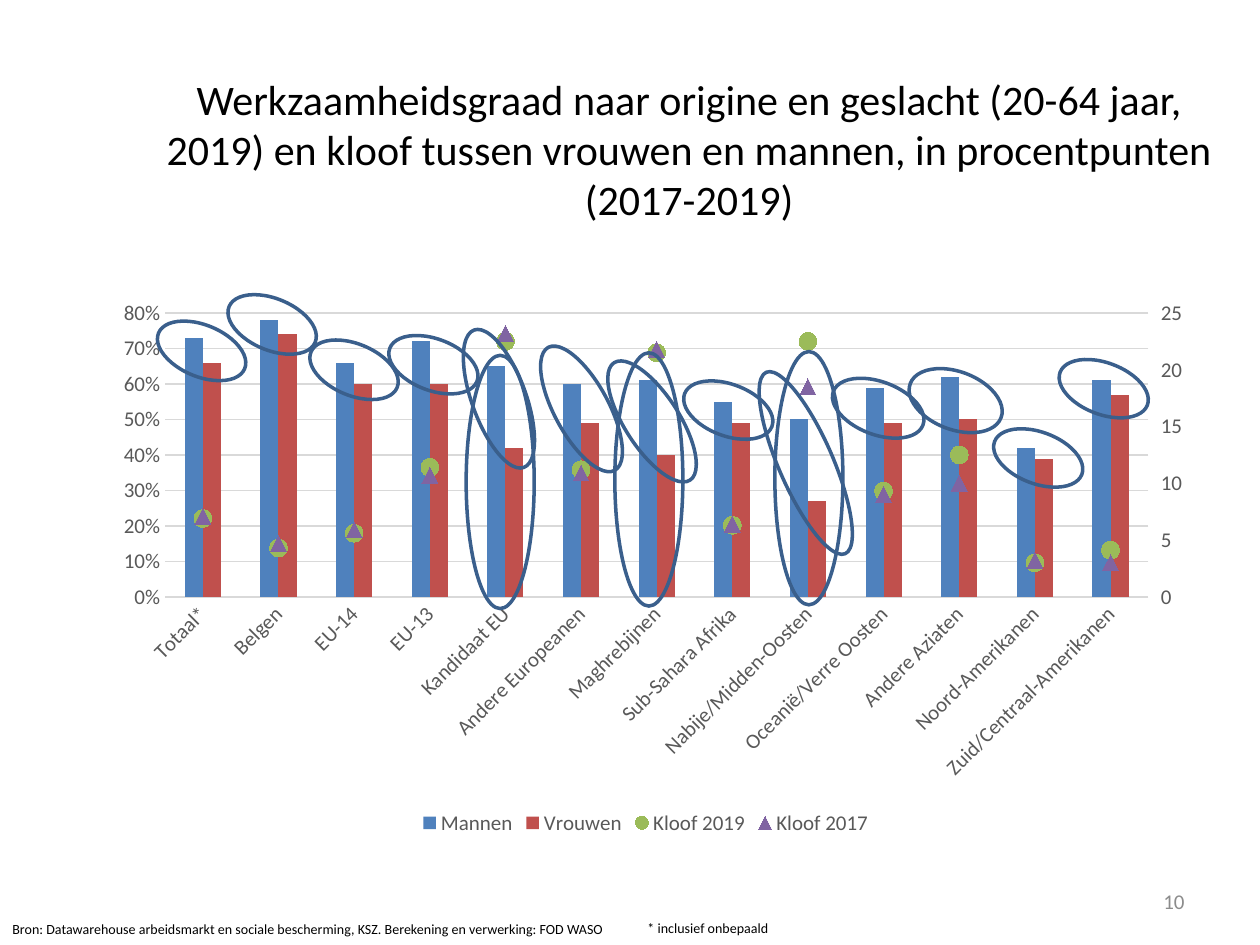
"""Build the slide on employment rate by origin and gender."""
from lxml import etree
from pptx import Presentation
from pptx.chart.data import CategoryChartData
from pptx.dml.color import RGBColor
from pptx.enum import chart as ch, shapes, text
from pptx.oxml import parse_xml
from pptx.oxml.ns import qn
from pptx.util import Inches, Pt

THEME = {
    "font": "Calibri", "ink": "000000", "axis": "595959", "grid": "D9D9D9",
    "number": "8C8C8C", "ring": "3A5F8C",
    "title_size": 24, "chart_size": 12, "note_size": 8,
}
TITLE = ("Werkzaamheidsgraad naar origine en geslacht (20-64 jaar, 2019) en kloof "
         "tussen vrouwen en mannen, in procentpunten (2017-2019)")
SOURCE = ("Bron: Datawarehouse arbeidsmarkt en sociale bescherming, KSZ. "
          "Berekening en verwerking: FOD WASO")
FOOTNOTE = "* inclusief onbepaald"
PAGE = "10"

ORIGINS = ["Totaal*", "Belgen", "EU-14", "EU-13", "Kandidaat EU", "Andere Europeanen",
           "Maghrebijnen", "Sub-Sahara Afrika", "Nabije/Midden-Oosten",
           "Oceanië/Verre Oosten", "Andere Aziaten", "Noord-Amerikanen",
           "Zuid/Centraal-Amerikanen"]
RATES = [
    ("Mannen", "4F81BD",
     [.73, .78, .66, .72, .65, .6, .61, .55, .5, .59, .62, .42, .61]),
    ("Vrouwen", "C0504D",
     [.66, .74, .6, .6, .42, .49, .4, .49, .27, .49, .5, .39, .57]),
]
GAPS = [
    ("Kloof 2019", "9BBB59", ch.XL_MARKER_STYLE.CIRCLE, 10,
     [6.9, 4.3, 5.6, 11.4, 22.5, 11.2, 21.5, 6.3, 22.5, 9.3, 12.5, 3, 4.1]),
    ("Kloof 2017", "8064A2", ch.XL_MARKER_STYLE.TRIANGLE, 9,
     [7.1, 4.7, 5.9, 10.7, 23.2, 10.9, 21.8, 6.4, 18.5, 9, 10, 3.2, 3]),
]
PLOT_AREA = {"x": .064, "y": .051, "w": .892, "h": .511}

SMALL, TALL = (.74, .41), (.54, 2.01)
RINGS = [
    (1.23, 2.58, SMALL, 22.5), (1.79, 2.37, SMALL, 22.5), (2.44, 2.73, SMALL, 22.5),
    (3.07, 2.69, SMALL, 20.6), (8.39, 2.88, SMALL, 20.6), (7.87, 3.43, SMALL, 20.6),
    (6.59, 3.03, (.76, .42), 20.6), (4.62, 3.13, (1.11, .43), 57.1),
    (4.06, 3.03, (1.11, .43), 61.6), (3.38, 2.95, (1.16, .43), 70.1),
    (5.41, 3.05, SMALL, 20.6), (5.61, 3.46, (1.57, .43), 66.5),
    (3.7, 2.82, TALL, 0), (4.88, 2.8, TALL, 0), (6.15, 2.79, TALL, 0),
    (7.2, 2.95, (.77, .46), 20.6),
]

XML_NAMES = ('xmlns:c="http://schemas.openxmlformats.org/drawingml/2006/chart" '
             'xmlns:a="http://schemas.openxmlformats.org/drawingml/2006/main"')
LINE_PLOT = f"""<c:lineChart {XML_NAMES}><c:grouping val="standard"/><c:varyColors val="0"/>
<c:marker val="1"/><c:axId val="5001"/><c:axId val="5002"/></c:lineChart>"""
RIGHT_AXES = [
    f"""<c:valAx {XML_NAMES}><c:axId val="5002"/>
<c:scaling><c:orientation val="minMax"/><c:max val="25"/><c:min val="0"/></c:scaling>
<c:delete val="0"/><c:axPos val="r"/><c:numFmt formatCode="0" sourceLinked="0"/>
<c:majorTickMark val="out"/><c:minorTickMark val="none"/><c:tickLblPos val="nextTo"/>
<c:spPr><a:ln><a:noFill/></a:ln></c:spPr>
<c:txPr><a:bodyPr/><a:p><a:pPr><a:defRPr sz="{THEME['chart_size'] * 100}">
<a:solidFill><a:srgbClr val="{THEME['axis']}"/></a:solidFill>
<a:latin typeface="{THEME['font']}"/></a:defRPr></a:pPr></a:p></c:txPr>
<c:crossAx val="5001"/><c:crosses val="max"/><c:crossBetween val="between"/>
<c:majorUnit val="5"/></c:valAx>""",
    f"""<c:catAx {XML_NAMES}><c:axId val="5001"/>
<c:scaling><c:orientation val="minMax"/></c:scaling><c:delete val="1"/><c:axPos val="b"/>
<c:majorTickMark val="none"/><c:minorTickMark val="none"/><c:tickLblPos val="nextTo"/>
<c:crossAx val="5002"/><c:crosses val="autoZero"/></c:catAx>""",
]


def color(name):
    return RGBColor.from_string(THEME.get(name, name))


def style_font(font, size, ink):
    font.name, font.size = THEME["font"], Pt(THEME[size])
    font.color.rgb = color(ink)


def write(frame, words, size, ink, align):
    paragraph = frame.paragraphs[0]
    paragraph.alignment = align
    run = paragraph.add_run()
    run.text = words
    style_font(run.font, size, ink)


def place(shape, box):
    shape.left, shape.top, shape.width, shape.height = map(Inches, box)


def add_note(slide, box, words, size="note_size", ink="ink", align=text.PP_ALIGN.LEFT,
             wrap=True, anchor=text.MSO_ANCHOR.TOP):
    frame = slide.shapes.add_textbox(*map(Inches, box)).text_frame
    frame.word_wrap, frame.vertical_anchor = wrap, anchor
    write(frame, words, size, ink, align)


def add_rates_chart(slide):
    data = CategoryChartData(number_format="0%")
    data.categories = ORIGINS
    for name, _, values in RATES:
        data.add_series(name, values)
    for name, *_, values in GAPS:
        data.add_series(name, values, number_format="0.0")
    chart = slide.shapes.add_chart(
        ch.XL_CHART_TYPE.COLUMN_CLUSTERED,
        *map(Inches, (.75, 2.26, 8.75, 4.41)), data).chart
    style_font(chart.font, "chart_size", "ink")
    chart.has_title = False
    chart.has_legend = True
    chart.legend.position = ch.XL_LEGEND_POSITION.BOTTOM
    chart.legend.include_in_layout = False
    style_font(chart.legend.font, "chart_size", "axis")

    origins, rates = chart.category_axis, chart.value_axis
    for axis in (origins, rates):
        axis.major_tick_mark = axis.minor_tick_mark = ch.XL_TICK_MARK.NONE
        style_font(axis.tick_labels.font, "chart_size", "axis")
    label_body = origins._element.find(qn("c:txPr")).find(qn("a:bodyPr"))
    label_body.set("rot", "-2700000")
    label_body.set("vert", "horz")
    rates.minimum_scale, rates.maximum_scale, rates.major_unit = 0, .8, .1
    rates.tick_labels.number_format = "0%"
    rates.tick_labels.number_format_is_linked = False
    rates.format.line.fill.background()
    for line in (origins.format.line, rates.major_gridlines.format.line):
        line.color.rgb, line.width = color("grid"), Pt(.75)

    split_gaps(chart)
    bars, markers = chart.plots
    bars.gap_width, bars.overlap, bars.vary_by_categories = 219, 0, False
    for series, (_, ink, _) in zip(bars.series, RATES):
        series.format.fill.solid()
        series.format.fill.fore_color.rgb = color(ink)
    for series, (_, ink, style, size, _) in zip(markers.series, GAPS):
        series.smooth = False
        series.format.line.fill.background()
        series.marker.style, series.marker.size = style, size
        series.marker.format.fill.solid()
        series.marker.format.fill.fore_color.rgb = color(ink)
        series.marker.format.line.color.rgb = color(ink)


def split_gaps(chart):
    bars = chart.plots[0]._element
    area = bars.getparent()
    lines = parse_xml(LINE_PLOT)
    line_marker = lines.find(qn("c:marker"))
    for series in bars.findall(qn("c:ser"))[len(RATES):]:
        for bar_only in series.findall(qn("c:invertIfNegative")):
            series.remove(bar_only)
        line_marker.addprevious(series)
    bars.addnext(lines)
    for axis in RIGHT_AXES:
        area.findall(qn("c:valAx"))[-1].addnext(parse_xml(axis))
    for layout in area.findall(qn("c:layout")):
        area.remove(layout)
    layout = etree.SubElement(area, qn("c:layout"))
    area.insert(0, layout)
    manual = etree.SubElement(layout, qn("c:manualLayout"))
    settings = {"layoutTarget": "inner", "xMode": "edge", "yMode": "edge", **PLOT_AREA}
    for tag, value in settings.items():
        etree.SubElement(manual, qn(f"c:{tag}")).set("val", str(value))


def add_ring(slide, left, top, size, angle):
    ring = slide.shapes.add_shape(shapes.MSO_SHAPE.OVAL,
                                  *map(Inches, (left, top, *size)))
    ring.rotation = angle
    ring.shadow.inherit = False
    ring.fill.background()
    ring.line.color.rgb, ring.line.width = color("ring"), Pt(2)


def main():
    deck = Presentation()
    deck.slide_width, deck.slide_height = Inches(10), Inches(7.5)
    slide = deck.slides.add_slide(deck.slide_layouts[5])
    title = slide.shapes.title
    place(title, (1.22, .53, 8.5, 1.72))
    title.text_frame.vertical_anchor = text.MSO_ANCHOR.TOP
    title.text_frame.auto_size = text.MSO_AUTO_SIZE.NONE
    write(title.text_frame, TITLE, "title_size", "ink", text.PP_ALIGN.CENTER)
    add_note(slide, (7.17, 6.95, 2.33, .4), PAGE, "chart_size", "number",
             text.PP_ALIGN.RIGHT, anchor=text.MSO_ANCHOR.MIDDLE)
    add_note(slide, (0, 7.26, 5.07, .24), SOURCE)
    add_note(slide, (5.04, 7.25, 1.18, .24), FOOTNOTE, wrap=False)
    add_rates_chart(slide)
    for ring in RINGS:
        add_ring(slide, *ring)
    deck.save("out.pptx")


if __name__ == "__main__":
    main()
